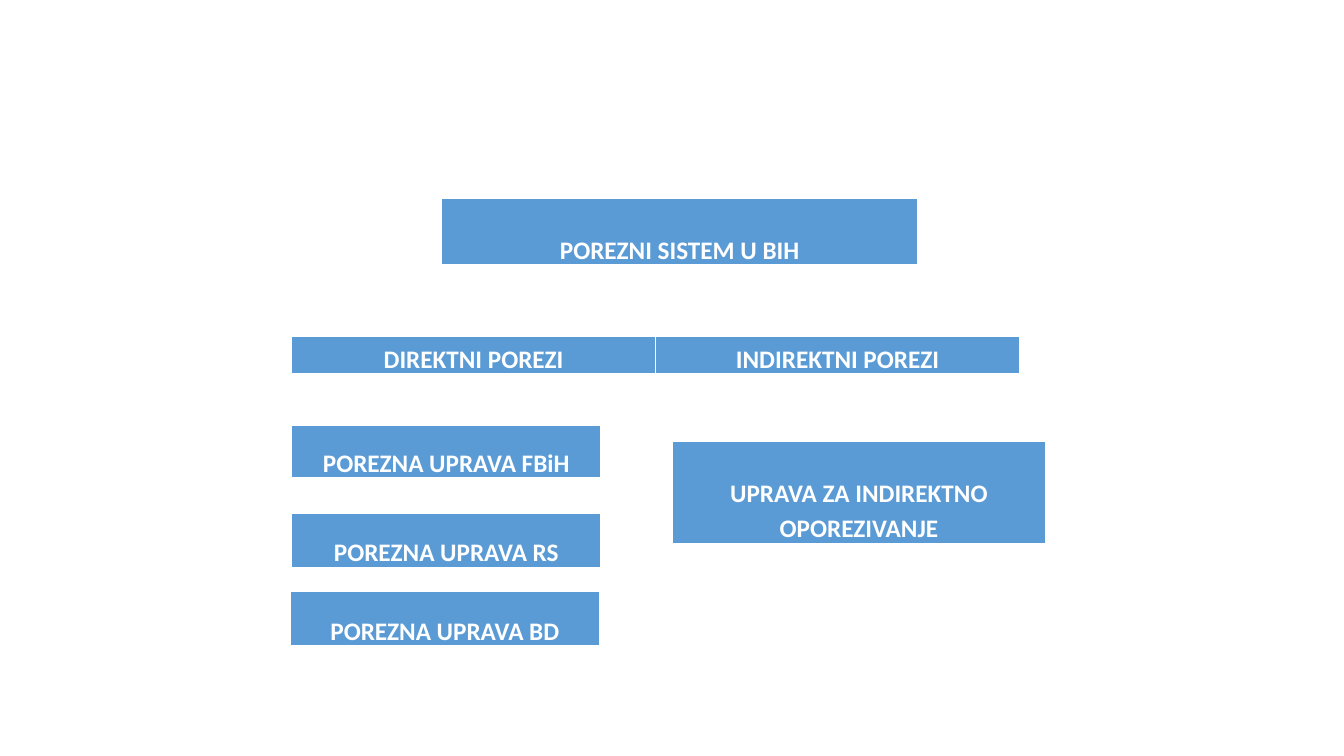
import pptx
import pptx.util
import pptx.dml.color
import pptx.enum.text
import lxml.etree

Pt = pptx.util.Pt
WHITE = "FFFFFF"
BLUE = "5B9BD5"
BORDERS = {"lnL": 1, "lnR": 1, "lnT": 1, "lnB": 3}

TABLES = [
    (["POREZNI SISTEM U BIH"], 315.5, 142, 340, 48),
    (["DIREKTNI POREZI", "INDIREKTNI POREZI"], 208.3, 240, 520, 28),
    (["POREZNA UPRAVA FBiH"], 208.3, 304, 221, 38),
    (["POREZNA UPRAVA RS"], 208.3, 366.5, 221, 39.5),
    (["UPRAVA ZA INDIREKTNO OPOREZIVANJE"], 480.3, 315.5, 266.5, 73.5),
    (["POREZNA UPRAVA BD"], 207.3, 422.6, 221, 39.5),
]


def color(value):
    return pptx.dml.color.RGBColor.from_string(value)


def add_borders(cell):
    ns = "{http://schemas.openxmlformats.org/drawingml/2006/main}"
    tcPr = cell._tc.get_or_add_tcPr()
    for side, width in BORDERS.items():
        ln = lxml.etree.SubElement(tcPr, ns + side, w=str(Pt(width)))
        fill = lxml.etree.SubElement(ln, ns + "solidFill")
        lxml.etree.SubElement(fill, ns + "srgbClr", val=WHITE)


def format_cell(cell, text):
    add_borders(cell)
    cell.fill.solid()
    cell.fill.fore_color.rgb = color(BLUE)
    cell.vertical_anchor = pptx.enum.text.MSO_ANCHOR.BOTTOM
    cell.margin_left = cell.margin_right = Pt(5.4)
    cell.margin_top = cell.margin_bottom = 0
    p = cell.text_frame.paragraphs[0]
    p.text = text
    p.alignment = pptx.enum.text.PP_ALIGN.CENTER
    p.line_spacing = 1.15
    font = p.runs[0].font
    font.name = "Calibri"
    font.size = Pt(18)
    font.bold = True
    font.color.rgb = color(WHITE)


def main():
    prs = pptx.Presentation()
    prs.slide_width, prs.slide_height = Pt(960), Pt(540)
    s = prs.slides.add_slide(prs.slide_layouts[6])
    for labels, left, top, width, height in TABLES:
        table = s.shapes.add_table(
            1, len(labels), Pt(left), Pt(top), Pt(width), Pt(height)
        ).table
        for cell, label in zip(table.iter_cells(), labels):
            format_cell(cell, label)
    prs.save("out.pptx")


if __name__ == "__main__":
    main()
